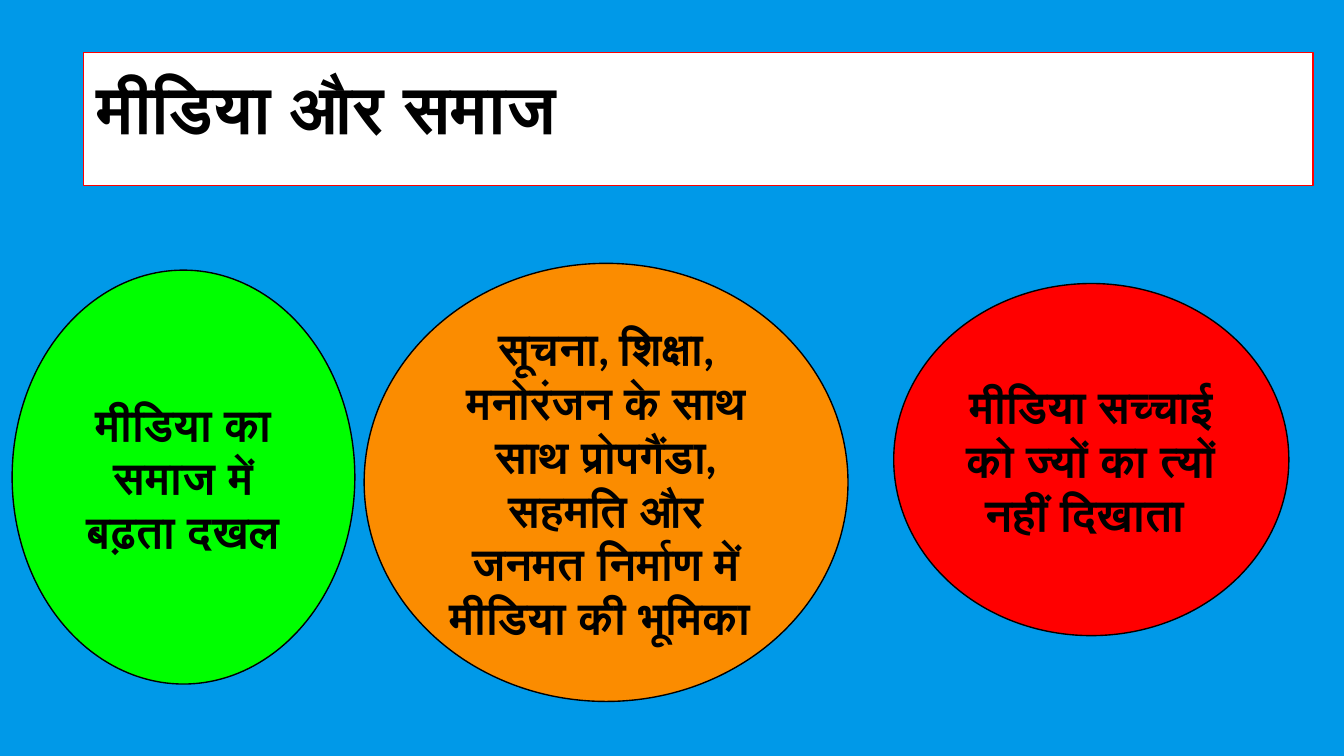
from pptx import Presentation
from pptx.dml.color import RGBColor
from pptx.enum.shapes import MSO_SHAPE
from pptx.enum.text import MSO_ANCHOR, PP_ALIGN
from pptx.util import Inches, Pt

RECTANGLE, OVAL = MSO_SHAPE.RECTANGLE, MSO_SHAPE.OVAL
TOP, MIDDLE = MSO_ANCHOR.TOP, MSO_ANCHOR.MIDDLE
LEFT, CENTER = PP_ALIGN.LEFT, PP_ALIGN.CENTER

COLORS = {
    "background": "0099E8",
    "white": "FFFFFF",
    "black": "000000",
    "green": "00FF00",
    "orange": "FB8C00",
    "red": "FF0000",
}

TITLE_BOX = (0.62, 0.39, 9.15, 0.99)

# Box, fill and text of each circle, from back to front
CIRCLES = [
    ((0.09, 2.01, 2.55, 3.08), "green", "मीडिया का समाज में बढ़ता दखल"),
    ((6.65, 2.11, 2.94, 2.62), "red",
     "मीडिया सच्चाई को ज्यों का त्यों नहीं दिखाता "),
    ((2.71, 1.96, 3.6, 3.26), "orange",
     "सूचना, शिक्षा, मनोरंजन के साथ साथ प्रोपगैंडा, सहमति और "
     "जनमत निर्माण में मीडिया की भूमिका "),
]


def color(name):
    return RGBColor.from_string(COLORS[name])


def add_panel(page, kind, box, fill, line, text, font, size, anchor, align):
    """Add a filled, outlined shape with one bold paragraph."""
    shape = page.shapes.add_shape(kind, *(Inches(length) for length in box))
    shape.shadow.inherit = False
    shape.fill.solid()
    shape.fill.fore_color.rgb = color(fill)
    shape.line.color.rgb = color(line)
    shape.line.width = Pt(0.75)

    frame = shape.text_frame
    frame.word_wrap = True
    frame.vertical_anchor = anchor
    frame.margin_left = frame.margin_right = Inches(0.1)
    frame.margin_top = frame.margin_bottom = Inches(0.1)
    frame.text = text
    para = frame.paragraphs[0]
    para.alignment = align
    span = para.runs[0]
    span.font.name = font
    span.font.size = Pt(size)
    span.font.bold = True
    span.font.color.rgb = color("black")
    return para


def add_title(page, box):
    para = add_panel(page, RECTANGLE, box, "white", "red", "मीडिया और समाज",
                     "Manrope", 36, TOP, LEFT)
    para.space_after = Pt(16)


def add_circle(page, box, fill, text):
    add_panel(page, OVAL, box, fill, "black", text, "Lato", 24, MIDDLE, CENTER)


def main():
    deck = Presentation()
    # Widescreen, 16:9
    deck.slide_width = Inches(10)
    deck.slide_height = Inches(10 * 9 / 16)
    page = deck.slides.add_slide(deck.slide_layouts[6])
    page.background.fill.solid()
    page.background.fill.fore_color.rgb = color("background")

    add_title(page, TITLE_BOX)
    for box, fill, text in CIRCLES:
        add_circle(page, box, fill, text)

    deck.save("out.pptx")


if __name__ == "__main__":
    main()
